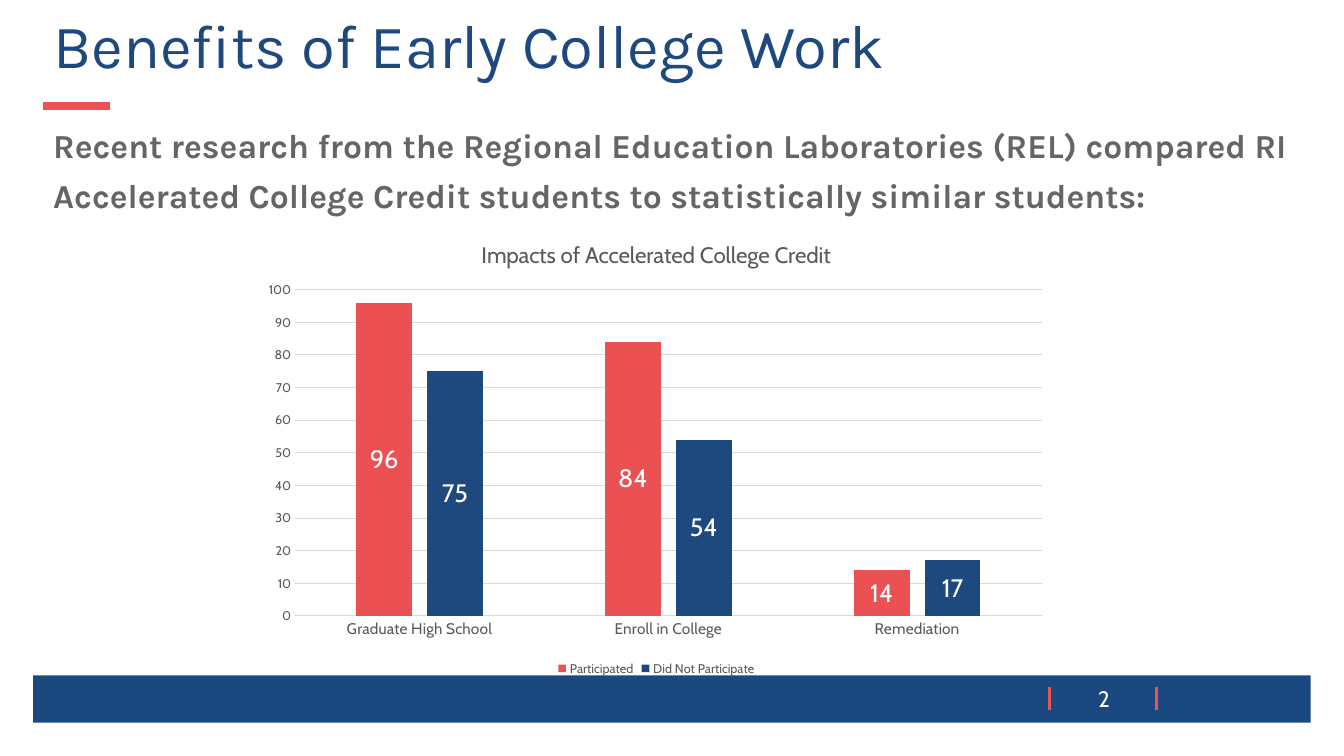
import pptx
import pptx.chart.data
import pptx.dml.color
import pptx.enum.chart
import pptx.enum.shapes
import pptx.enum.text
import pptx.oxml
import pptx.oxml.ns
import pptx.util

Inches = pptx.util.Inches
Pt = pptx.util.Pt
PP = pptx.enum.text.PP_ALIGN
ANCHOR = pptx.enum.text.MSO_ANCHOR
XL = pptx.enum.chart

COLORS = {
    "navy": "1E497F",
    "footer": "1A497F",
    "red": "EB5152",
    "accent": "EC5153",
    "gray": "656565",
    "label": "595959",
    "grid": "D9D9D9",
    "white": "FFFFFF",
}


class SlideBuilder:
    heading_font = "Karla"
    label_font = "Cabin"

    def __init__(self, slide):
        self.s = slide

    def color(self, name):
        return pptx.dml.color.RGBColor.from_string(COLORS[name])

    def style(self, font, name, size, color, bold=False):
        font.name = name
        font.size = Pt(size)
        font.bold = bold
        font.color.rgb = self.color(color)

    def line(self, x1, y1, x2, y2, color, width):
        cn = self.s.shapes.add_connector(
            pptx.enum.shapes.MSO_CONNECTOR.STRAIGHT,
            Inches(x1), Inches(y1), Inches(x2), Inches(y2))
        cn.line.color.rgb = self.color(color)
        cn.line.width = Pt(width)
        cn._element.spPr.append(pptx.oxml.parse_xml(
            "<a:effectLst %s/>" % pptx.oxml.ns.nsdecls("a")))

    def bar(self, x, y, w, h, color):
        sp = self.s.shapes.add_shape(
            pptx.enum.shapes.MSO_SHAPE.RECTANGLE,
            Inches(x), Inches(y), Inches(w), Inches(h))
        sp.shadow.inherit = False
        sp.fill.solid()
        sp.fill.fore_color.rgb = self.color(color)
        sp.line.fill.background()

    def text(self, x, y, w, h, text, font, size, color, bold=False,
             align=PP.LEFT, anchor=ANCHOR.TOP, spacing=1.0):
        tf = self.s.shapes.add_textbox(
            Inches(x), Inches(y), Inches(w), Inches(h)).text_frame
        tf.word_wrap = True
        tf.vertical_anchor = anchor
        p = tf.paragraphs[0]
        p.alignment = align
        p.line_spacing = spacing
        r = p.add_run()
        r.text = text
        self.style(r.font, font, size, color, bold)

    def column_chart(self, x, y, w, h, title, categories, series):
        data = pptx.chart.data.CategoryChartData()
        data.categories = categories
        for name, values, _ in series:
            data.add_series(name, values)
        chart = self.s.shapes.add_chart(
            XL.XL_CHART_TYPE.COLUMN_CLUSTERED,
            Inches(x), Inches(y), Inches(w), Inches(h), data).chart
        self.style(chart.font, self.label_font, 10, "label")

        chart.has_title = True
        r = chart.chart_title.text_frame.paragraphs[0].add_run()
        r.text = title
        self.style(r.font, self.label_font, 16, "label")
        chart.chart_title.include_in_layout = False

        chart.has_legend = True
        chart.legend.position = XL.XL_LEGEND_POSITION.BOTTOM
        chart.legend.include_in_layout = False
        self.style(chart.legend.font, self.label_font, 9, "label")

        cat, val = chart.category_axis, chart.value_axis
        for axis, size in ((cat, 11), (val, 9)):
            axis.major_tick_mark = XL.XL_TICK_MARK.NONE
            axis.minor_tick_mark = XL.XL_TICK_MARK.NONE
            self.style(axis.tick_labels.font, self.label_font, size, "label")
        val.minimum_scale, val.maximum_scale, val.major_unit = 0, 100, 10
        val.format.line.fill.background()
        val.has_major_gridlines = True
        for fmt in (cat.format, val.major_gridlines.format):
            fmt.line.color.rgb = self.color("grid")
            fmt.line.width = Pt(0.75)

        plot = chart.plots[0]
        plot.gap_width, plot.overlap = 219, -27
        plot.vary_by_categories = False
        for ser, (_, _, color) in zip(plot.series, series):
            ser.format.fill.solid()
            ser.format.fill.fore_color.rgb = self.color(color)
            labels = ser.data_labels
            labels.show_value = True
            labels.position = XL.XL_LABEL_POSITION.CENTER
            self.style(labels.font, self.label_font, 18, "white")
        self.chart_layout(chart)

    def chart_layout(self, chart):
        ns = pptx.oxml.ns.nsdecls("c", "a")
        space = chart._chartSpace
        area = space.chart.plotArea
        for old in area.findall(pptx.oxml.ns.qn("c:layout")):
            area.remove(old)
        sizes = "".join(
            '<c:%s val="%s"/>' % item
            for item in (("x", 0.05), ("y", 0.15), ("w", 0.93), ("h", 0.71)))
        area.insert(0, pptx.oxml.parse_xml(
            '<c:layout %s><c:manualLayout><c:layoutTarget val="inner"/>'
            '<c:xMode val="edge"/><c:yMode val="edge"/>%s'
            '</c:manualLayout></c:layout>' % (ns, sizes)))
        space.chart.addnext(pptx.oxml.parse_xml(
            "<c:spPr %s><a:noFill/><a:ln><a:noFill/></a:ln></c:spPr>" % ns))


def main():
    prs = pptx.Presentation()
    prs.slide_width, prs.slide_height = Inches(13.33), Inches(7.5)
    b = SlideBuilder(prs.slides.add_slide(prs.slide_layouts[6]))

    b.line(0.43, 1.05, 1.09, 1.05, "accent", 6)
    b.bar(0.33, 6.7, 12.67, 0.47, "footer")
    for x in (10.41, 11.47):
        b.line(x, 6.82, x, 7.04, "accent", 2.25)

    b.text(0.43, 0.1, 12.67, 0.77, "Benefits of Early College Work",
           b.heading_font, 44, "navy", anchor=ANCHOR.MIDDLE, spacing=0.9)
    b.text(0.43, 1.1, 12.67, 1.09,
           "Recent research from the Regional Education Laboratories (REL) "
           "compared RI Accelerated College Credit students to statistically "
           "similar students:",
           b.heading_font, 24, "gray", bold=True, spacing=1.23)
    b.text(10.63, 6.75, 0.64, 0.37, "2", b.label_font, 16, "white",
           align=PP.CENTER, anchor=ANCHOR.MIDDLE)

    b.column_chart(
        2.53, 2.19, 7.96, 4.56, "Impacts of Accelerated College Credit",
        ["Graduate High School", "Enroll in College", "Remediation"],
        [("Participated", (96, 84, 14), "red"),
         ("Did Not Participate", (75, 54, 17), "navy")])

    prs.save("out.pptx")


if __name__ == "__main__":
    main()
